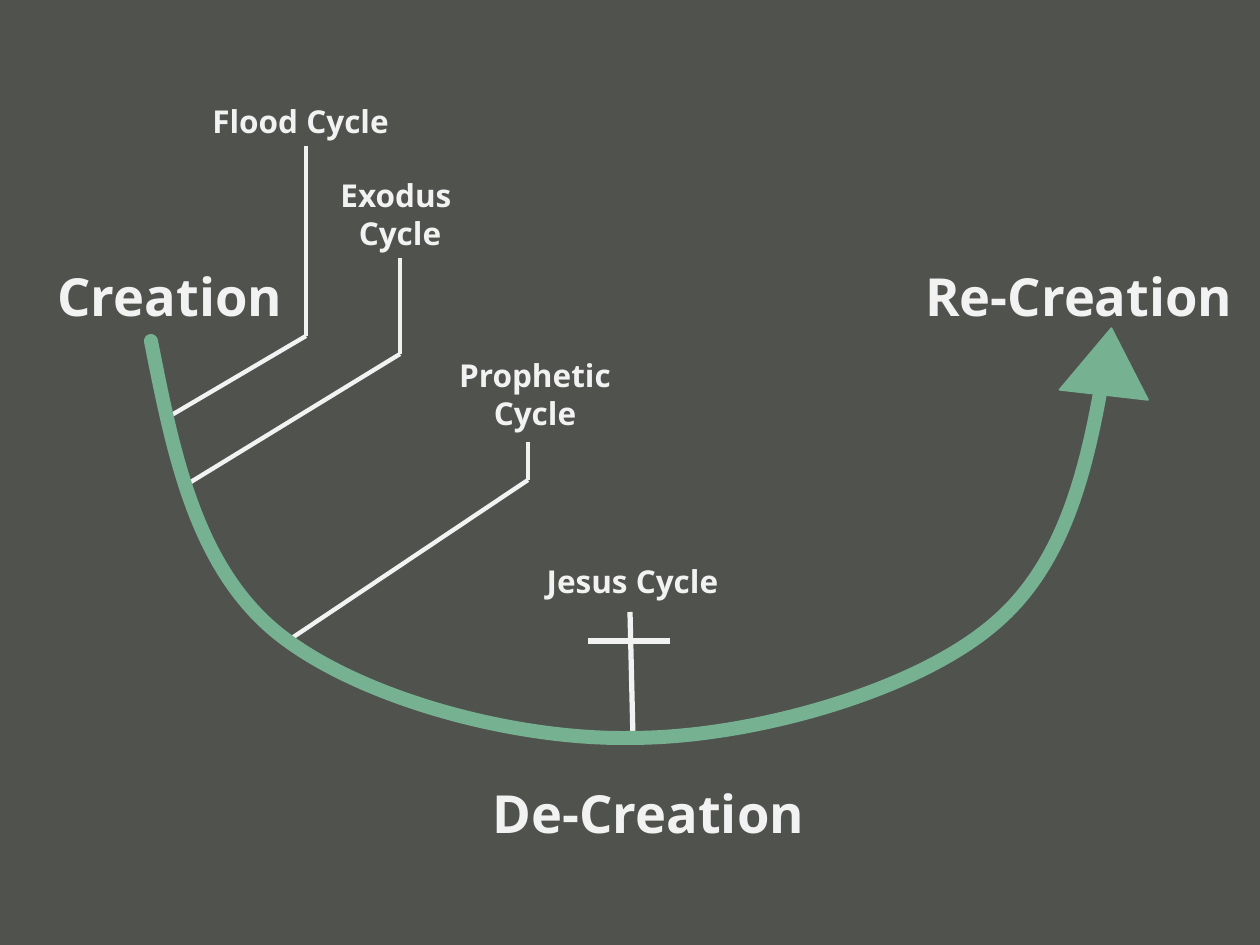
from itertools import pairwise

from lxml.etree import SubElement
from pptx import Presentation
from pptx.dml.color import RGBColor
from pptx.enum.shapes import MSO_CONNECTOR, MSO_SHAPE
from pptx.enum.text import MSO_AUTO_SIZE, PP_ALIGN
from pptx.oxml.ns import qn
from pptx.util import Emu, Pt

EMU_PER_PX = 914400 / 126
FONT = "Open Sans"
BACKGROUND = RGBColor(0x50, 0x52, 0x4E)
WHITE = RGBColor(0xF2, 0xF2, 0xF2)
GREEN = RGBColor(0x76, 0xB1, 0x92)

# Boxes are left, top, width, height
STAGES = [
    ("Creation", (32, 258, 276, 77)),
    ("Re-Creation", (912, 258, 334, 77)),
    ("De-Creation", (479, 775, 339, 77)),
]
# Leader points start at the label and are relative to its box
CYCLES = [
    ("Flood Cycle", (200, 96, 214, 50), PP_ALIGN.LEFT,
     [(106, 50), (106, 240), (-30, 320)]),
    ("Exodus \nCycle", (321, 170, 158, 89), PP_ALIGN.CENTER,
     [(79, 88), (79, 184), (-135, 315)]),
    ("Prophetic \nCycle", (446, 350, 178, 89), PP_ALIGN.CENTER,
     [(82, 92), (82, 130), (-157, 290)]),
]
# Three points for each Bezier segment: two controls, then its end
CURVE = [
    (22, 111), (44, 223), (124, 290),
    (204, 356), (361, 399), (480, 397),
    (600, 397), (763, 351), (842, 284),
    (921, 218), (940, 109), (958, 0),
]


def px(n):
    return Emu(round(n * EMU_PER_PX))


def add_label(slide, text, box, size, align=PP_ALIGN.CENTER):
    tf = slide.shapes.add_textbox(*map(px, box)).text_frame
    tf.word_wrap = True
    tf.auto_size = MSO_AUTO_SIZE.SHAPE_TO_FIT_TEXT
    tf.text = text
    for p in tf.paragraphs:
        p.alignment = align
        font = p.runs[0].font
        font.name, font.size, font.bold = FONT, Pt(size), True
        font.color.rgb = WHITE


def add_path(slide, box, points, width):
    """Join points, given relative to the box, with straight lines."""
    left, top = box[:2]
    for (x1, y1), (x2, y2) in pairwise(points):
        line = slide.shapes.add_connector(
            MSO_CONNECTOR.STRAIGHT,
            px(left + x1), px(top + y1), px(left + x2), px(top + y2))
        line.line.color.rgb = WHITE
        line.line.width = Pt(width)
        SubElement(line._element.spPr, qn("a:effectLst"))


def add_cycle(slide, text, box, align, leader):
    add_path(slide, box, leader, 2.5)
    add_label(slide, text, box, 18, align)


def add_jesus_cycle(slide, box):
    add_path(slide, box, [(117, 56), (120, 182)], 3)
    add_path(slide, box, [(75, 85), (157, 85)], 3)
    add_label(slide, "Jesus Cycle", box, 18)


def bend_segments(sp):
    """Turn each three straight segments of a freeform into one Bezier."""
    path = next(sp._element.iter(qn("a:path")))
    lines = path.findall(qn("a:lnTo"))
    for i in range(0, len(lines), 3):
        bezier = SubElement(path, qn("a:cubicBezTo"))
        for line in lines[i:i + 3]:
            bezier.append(line[0])
            path.remove(line)


def add_curved_arrow(slide, box):
    left, top = box[:2]
    head = slide.shapes.add_shape(
        MSO_SHAPE.FLOWCHART_MERGE,
        px(left + 912), px(top - 13), px(89), px(67))
    head.rotation = 186.5
    head.fill.solid()
    head.fill.fore_color.rgb = GREEN
    head.line.width = Pt(1)

    builder = slide.shapes.build_freeform(0, 0, scale=EMU_PER_PX)
    builder.add_line_segments(CURVE, close=False)
    curve = builder.convert_to_shape(px(left), px(top))
    bend_segments(curve)
    curve.fill.background()
    curve.line.width = Pt(8)
    for sp in (head, curve):
        sp.shadow.inherit = False
        sp.line.color.rgb = GREEN
    curve.line._get_or_add_ln().set("cap", "rnd")


def main():
    prs = Presentation()
    prs.slide_width, prs.slide_height = px(1260), px(945)
    slide = prs.slides.add_slide(prs.slide_layouts[6])
    slide.background.fill.solid()
    slide.background.fill.fore_color.rgb = BACKGROUND

    for text, box in STAGES:
        add_label(slide, text, box, 30)
    for cycle in CYCLES:
        add_cycle(slide, *cycle)
    add_jesus_cycle(slide, (513, 556, 239, 50))
    add_curved_arrow(slide, (151, 341, 958, 398))
    prs.save("out.pptx")


if __name__ == "__main__":
    main()
